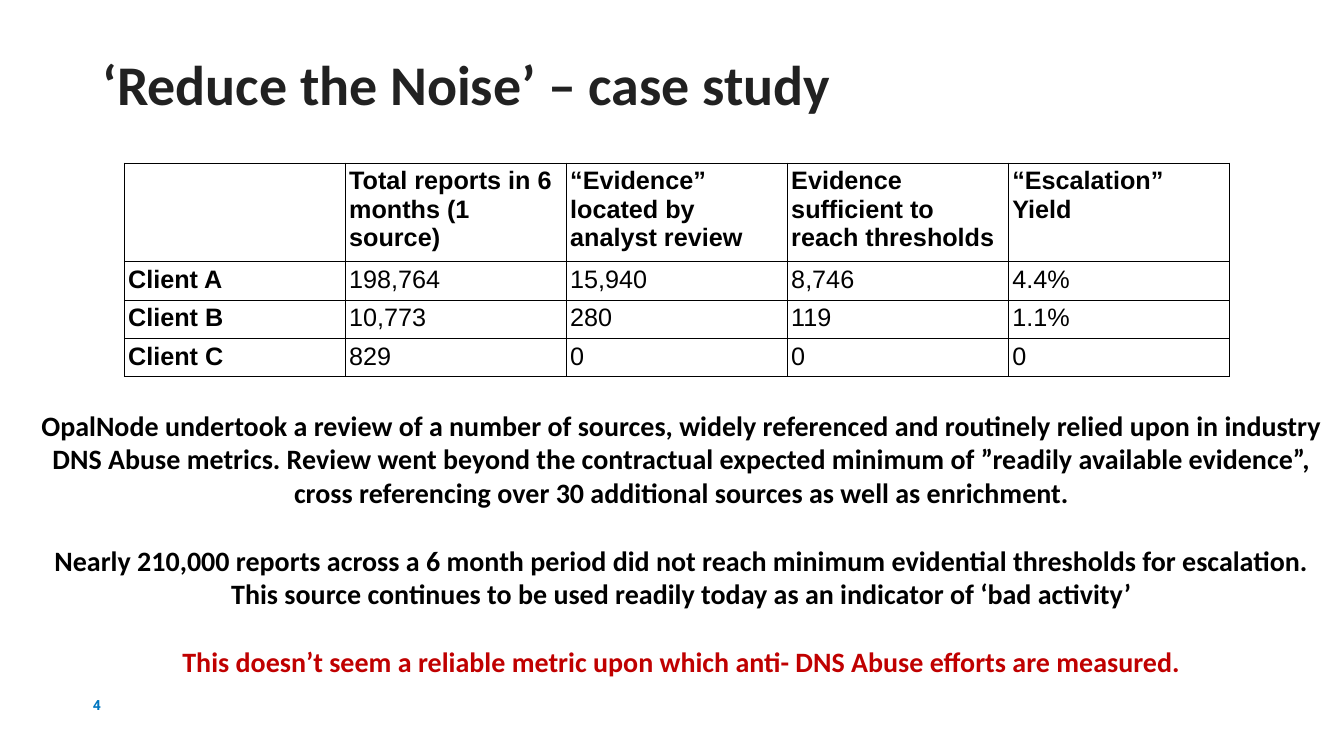
import lxml.etree
import pptx
import pptx.dml.color
import pptx.enum.text
import pptx.oxml.ns
import pptx.util

Cm = pptx.util.Cm
Pt = pptx.util.Pt
ALIGN = pptx.enum.text.PP_ALIGN
ANCHOR = pptx.enum.text.MSO_ANCHOR

BLACK = pptx.dml.color.RGBColor(0x00, 0x00, 0x00)
CHARCOAL = pptx.dml.color.RGBColor(0x21, 0x21, 0x21)
BLUE = pptx.dml.color.RGBColor(0x00, 0x76, 0xC0)
RED = pptx.dml.color.RGBColor(0xC0, 0x00, 0x00)

TITLE_FONT = {"name": "Calibri", "size": Pt(40), "bold": True}
NUMBER_FONT = {"name": "Roboto", "size": Pt(10), "bold": True}
BODY_FONT = {"name": "Calibri", "size": Pt(20), "bold": True}
LABEL_FONT = {"name": "Arial", "size": Pt(18), "bold": True}
VALUE_FONT = {**LABEL_FONT, "bold": False}

REPORTS = [
    ["", "Total reports in 6 months (1 source)", "“Evidence” located by analyst review",
     "Evidence sufficient to reach thresholds", "“Escalation” Yield"],
    ["Client A", "198,764", "15,940", "8,746", "4.4%"],
    ["Client B", "10,773", "280", "119", "1.1%"],
    ["Client C", "829", "0", "0", "0"],
]

FINDINGS = [
    ("OpalNode undertook a review of a number of sources, widely referenced and routinely "
     "relied upon in industry DNS Abuse metrics. Review went beyond the contractual expected "
     "minimum of ”readily available evidence”, cross referencing over 30 additional sources "
     "as well as enrichment.", BLACK),
    ("Nearly 210,000 reports across a 6 month period did not reach minimum evidential "
     "thresholds for escalation. This source continues to be used readily today as an "
     "indicator of ‘bad activity’", BLACK),
    ("This doesn’t seem a reliable metric upon which anti- DNS Abuse efforts are measured.", RED),
]


def set_values(target, values):
    for name, value in values.items():
        setattr(target, name, value)


def write(para, text, font, color):
    span = para.add_run()
    span.text = text
    set_values(span.font, font)
    span.font.color.rgb = color


def add_frame(page, area, **settings):
    frame = page.shapes.add_textbox(*(Cm(length) for length in area)).text_frame
    set_values(frame, {"word_wrap": True, **settings})
    return frame


def add_title(page, area, text):
    para = add_frame(page, area, vertical_anchor=ANCHOR.BOTTOM).paragraphs[0]
    para.line_spacing = 0.9
    write(para, text, TITLE_FONT, CHARCOAL)


def add_page_number(page, area, text):
    frame = add_frame(page, area, vertical_anchor=ANCHOR.MIDDLE, margin_left=0)
    write(frame.paragraphs[0], text, NUMBER_FONT, BLUE)


def add_findings(page, area, findings):
    frame = add_frame(page, area)
    for index, (text, color) in enumerate(findings):
        para = frame.add_paragraph() if index else frame.paragraphs[0]
        para.alignment = ALIGN.CENTER
        if index:
            para.space_before = Pt(24.4)
        write(para, text, BODY_FONT, color)


def outline_cell(cell):
    properties = cell._tc.get_or_add_tcPr()
    for index, side in enumerate(("lnL", "lnR", "lnT", "lnB")):
        line = lxml.etree.Element(pptx.oxml.ns.qn(f"a:{side}"), w=str(Pt(0.75)))
        fill = lxml.etree.SubElement(line, pptx.oxml.ns.qn("a:solidFill"))
        lxml.etree.SubElement(fill, pptx.oxml.ns.qn("a:srgbClr"), val=str(BLACK))
        properties.insert(index, line)


def add_reports(page, area, rows):
    left, top, width, height = (Cm(length) for length in area)
    header_height = Cm(2.37)
    table = page.shapes.add_table(len(rows), len(rows[0]), left, top, width, height).table
    set_values(table, {"first_row": False, "horz_banding": False})
    for row_index, row in enumerate(rows):
        table.rows[row_index].height = (
            (height - header_height) // (len(rows) - 1) if row_index else header_height)
        for column_index, text in enumerate(row):
            cell = table.cell(row_index, column_index)
            sides = ("left", "right", "top", "bottom")
            set_values(cell, {f"margin_{side}": Cm(0.1) for side in sides})
            cell.fill.background()
            outline_cell(cell)
            if text:
                is_label = row_index == 0 or column_index == 0
                write(cell.text_frame.paragraphs[0], text,
                      LABEL_FONT if is_label else VALUE_FONT, BLACK)


def build_case_study(deck):
    page = deck.slides.add_slide(deck.slide_layouts[6])
    # Heading
    add_title(page, (2.34, 1.02, 29.95, 2.08), "‘Reduce the Noise’ – case study")
    # Report counts by client
    add_reports(page, (3.13, 4.11, 27.85, 5.16), REPORTS)
    # Conclusions
    add_findings(page, (0.79, 10.16, 32.77, 7.09), FINDINGS)
    # Footer
    add_page_number(page, (2.34, 17.45, 7.62, 0.61), "4")


def main():
    deck = pptx.Presentation()
    set_values(deck, {"slide_width": Cm(33.87), "slide_height": Cm(19.05)})
    build_case_study(deck)
    deck.save("out.pptx")


if __name__ == "__main__":
    main()
